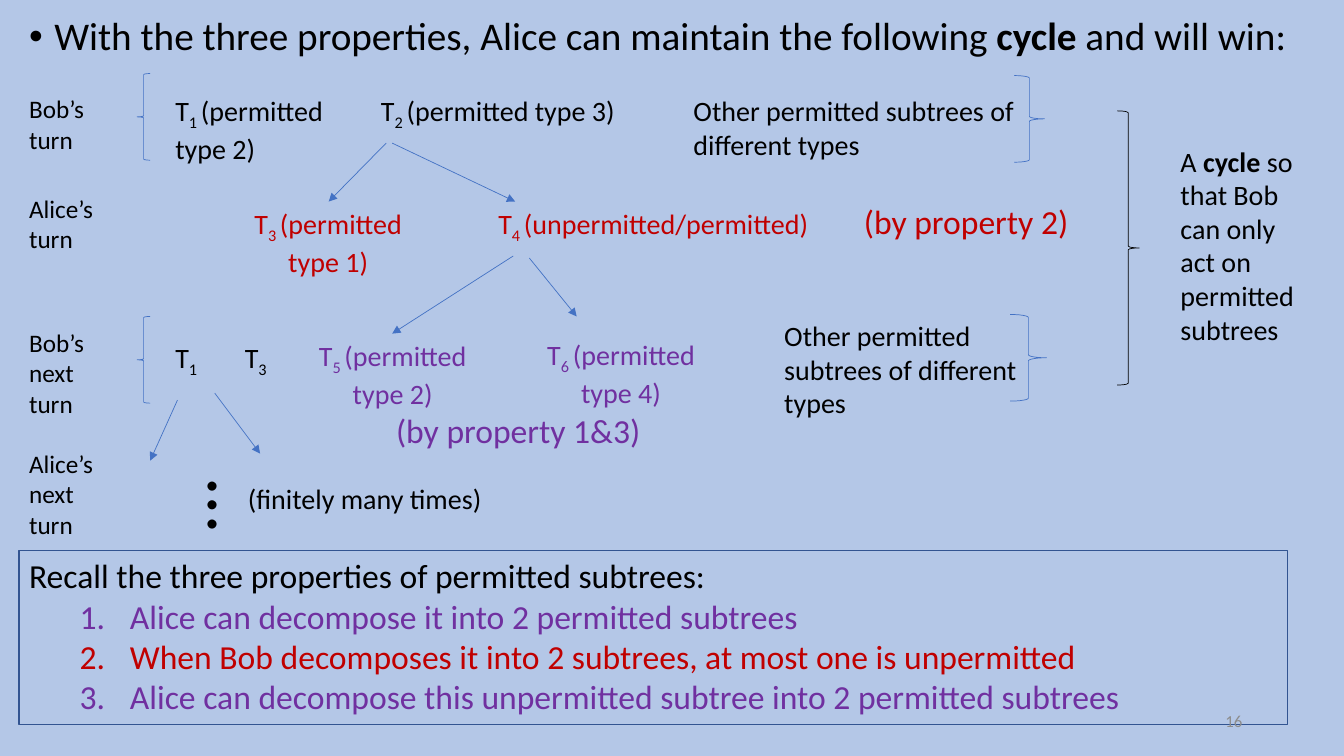
from pptx import Presentation
from pptx.dml.color import RGBColor
from pptx.enum.shapes import MSO_CONNECTOR, MSO_SHAPE
from pptx.enum.text import MSO_ANCHOR, PP_ALIGN
from pptx.oxml.ns import qn
from pptx.util import Inches, Pt
from lxml.etree import SubElement

BLACK, RED, PURPLE = "000000", "C00000", "7030A0"
BLUE, NAVY, GREY, BACK = "4472C4", "325491", "8C8C8C", "B4C7E7"
LEFT, MID, RIGHT = PP_ALIGN.LEFT, PP_ALIGN.CENTER, PP_ALIGN.RIGHT


def color(code):
    return RGBColor.from_string(code)


def style(font, size, code, bold=False):
    values = {"name": "Calibri", "size": Pt(size), "bold": bold}
    for key, value in values.items():
        setattr(font, key, value)
    font.color.rgb = color(code)


def write(para, parts, size, code, align=LEFT):
    """Each part is plain text or a pair of text and 'bold' or 'sub'."""
    para.alignment = align
    for part in [parts] if isinstance(parts, str) else parts:
        text, kind = (part, "") if isinstance(part, str) else part
        run = para.add_run()
        run.text = text
        style(run.font, size, code, kind == "bold")
        if kind == "sub":
            run._r.get_or_add_rPr().set("baseline", "-25000")


def label(slide, box, lines, size=20, code=BLACK, align=LEFT):
    shape = slide.shapes.add_textbox(*map(Inches, box))
    frame = shape.text_frame
    frame.word_wrap = True
    for i, parts in enumerate(lines):
        para = frame.add_paragraph() if i else frame.paragraphs[0]
        write(para, parts, size, code, align)
    return shape


def bullet(para, left, hang, tag, **marks):
    props = para._p.get_or_add_pPr()
    props.set("marL", str(Inches(left)))
    props.set("indent", str(-Inches(hang)))
    SubElement(props, qn("a:buFont")).set("typeface", "Arial" if tag == "buChar" else "+mj-lt")
    mark = SubElement(props, qn("a:" + tag))
    for key, value in marks.items():
        mark.set(key, value)


def tree(num, note=""):
    return ["T", (num + " " if note else num, "sub"), note] if note else ["T", (num, "sub")]


def outline(slide, kind, box, code=BLUE, width=0.5):
    shape = slide.shapes.add_shape(kind, *map(Inches, box))
    shape.shadow.inherit = False
    shape.fill.background()
    shape.line.color.rgb = color(code)
    shape.line.width = Pt(width)


def arrow(slide, *ends):
    link = slide.shapes.add_connector(MSO_CONNECTOR.STRAIGHT, *map(Inches, ends))
    link.line.color.rgb = color(BLUE)
    link.line.width = Pt(0.5)
    SubElement(link.line._get_or_add_ln(), qn("a:tailEnd")).set("type", "triangle")
    SubElement(link.element.spPr, qn("a:effectLst"))


def title(slide):
    shape = label(slide, (0.19, 0.12, 12.8, 0.6), [[]])
    para = shape.text_frame.paragraphs[0]
    para.line_spacing = 0.9
    bullet(para, 0.25, 0.25, "buChar", char="•")
    write(para, ["With the three properties, Alice can maintain the following ",
                 ("cycle", "bold"), " and will win:"], 28, BLACK)


def recall(slide):
    box = (0.19, 5.46, 12.58, 1.73)
    outline(slide, MSO_SHAPE.RECTANGLE, box, NAVY, 1)
    shape = label(slide, box, ["Recall the three properties of permitted subtrees:"], 24)
    rules = [
        ("Alice can decompose it into 2 permitted subtrees", PURPLE),
        ("When Bob decomposes it into 2 subtrees, at most one is unpermitted", RED),
        ("Alice can decompose this unpermitted subtree into 2 permitted subtrees", PURPLE),
    ]
    for text, code in rules:
        para = shape.text_frame.add_paragraph()
        para.level = 1
        bullet(para, 1, 0.5, "buAutoNum", type="arabicPeriod")
        write(para, text, 24, code)


def main():
    deck = Presentation()
    deck.slide_width, deck.slide_height = Inches(13.33), Inches(7.5)
    slide = deck.slides.add_slide(deck.slide_layouts[6])
    slide.background.fill.solid()
    slide.background.fill.fore_color.rgb = color(BACK)
    title(slide)

    # Turns down the left side
    turns = [(0.88, 0.71, "Bob’s turn"), (1.87, 0.71, "Alice’s turn"),
             (3.2, 1.01, "Bob’s next turn"), (4.4, 1.01, "Alice’s next turn")]
    for top, high, text in turns:
        label(slide, (0.19, top, 0.92, high), [text], 18)

    # Subtrees
    other = "Other permitted subtrees of different types"
    trees = [
        ((1.64, 0.88, 1.87, 0.77), [tree("1", "(permitted type 2)")], BLACK, LEFT),
        ((3.68, 0.88, 2.68, 0.44), [tree("2", "(permitted type 3)")], BLACK, LEFT),
        ((6.78, 0.88, 3.94, 0.77), [other], BLACK, LEFT),
        ((2.24, 2, 2.03, 0.77), [tree("3", "(permitted type 1)")], RED, MID),
        ((4.41, 2, 4.14, 0.44), [tree("4", "(unpermitted/permitted)")], RED, MID),
        ((1.64, 3.33, 0.6, 0.44), [tree("1")], BLACK, LEFT),
        ((2.33, 3.33, 0.6, 0.44), [tree("3")], BLACK, LEFT),
        ((2.88, 3.31, 2.03, 0.77), [tree("5", "(permitted type 2)")], PURPLE, MID),
        ((4.97, 3.3, 2.38, 0.77), [tree("6", "(permitted"), "type 4)"], PURPLE, MID),
        ((7.68, 3.11, 2.87, 1.11), [other], BLACK, LEFT),
    ]
    for box, lines, code, align in trees:
        label(slide, box, lines, 20, code, align)

    # Reasons and remarks
    label(slide, (8.47, 1.94, 2.83, 0.5), ["(by property 2)"], 24, RED)
    label(slide, (3.83, 4.02, 2.83, 0.5), ["(by property 1&3)"], 24, PURPLE)
    label(slide, (2.36, 4.73, 3.2, 0.44), ["(finitely many times)"])
    label(slide, (11.61, 1.38, 1.36, 2.12), [
        ["A ", ("cycle", "bold"), " so that Bob can only act on permitted subtrees"]])
    dots = label(slide, (1.76, 4.66, 1.11, 1.1), ["…"], 54)
    dots.element.txBody.bodyPr.set("vert", "eaVert")

    # Arrows from each subtree to its parts
    for ends in [(3.83, 1.42, 3.26, 2), (3.89, 1.42, 5.11, 2),
                 (5.09, 2.54, 3.89, 3.31), (5.25, 2.56, 5.72, 3.14),
                 (1.76, 3.97, 1.49, 4.57), (2.13, 3.9, 2.58, 4.5)]:
        arrow(slide, *ends)

    # Braces around Bob's rows and the whole cycle
    for top in (0.73, 3.14):
        outline(slide, MSO_SHAPE.LEFT_BRACE, (1.36, top, 0.13, 0.86))
    for box in [(10.06, 0.75, 0.3, 0.86), (10.02, 3.12, 0.36, 0.86)]:
        outline(slide, MSO_SHAPE.RIGHT_BRACE, box)
    outline(slide, MSO_SHAPE.RIGHT_BRACE, (11.08, 1.1, 0.22, 2.72), BLACK)

    # Recall box and page number
    recall(slide)
    page = label(slide, (9.42, 6.95, 3, 0.4), ["16"], 12, GREY, RIGHT)
    page.text_frame.vertical_anchor = MSO_ANCHOR.MIDDLE
    deck.save("out.pptx")


if __name__ == "__main__":
    main()
